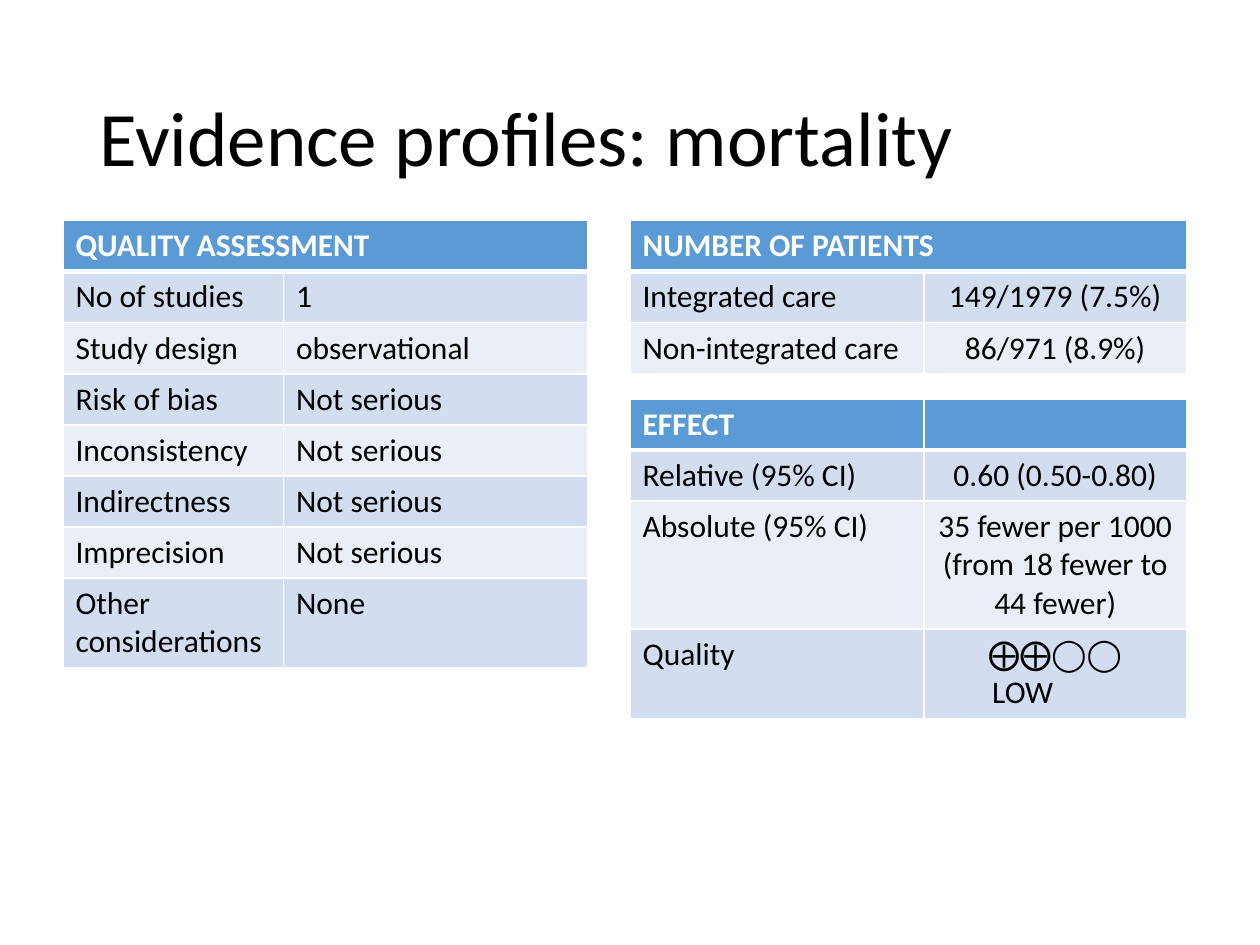
"""Build the mortality evidence profile slide with its three tables."""
from dataclasses import dataclass

from lxml import etree
from pptx import Presentation
from pptx.dml.color import RGBColor
from pptx.enum.text import MSO_ANCHOR, MSO_AUTO_SIZE, PP_ALIGN
from pptx.oxml.ns import qn
from pptx.util import Pt

LEFT, CENTER = PP_ALIGN.LEFT, PP_ALIGN.CENTER
MIDDLE = MSO_ANCHOR.MIDDLE
NO_AUTOFIT = MSO_AUTO_SIZE.NONE
TITLE_ONLY = 5
FONT = "Calibri"
COLORS = {"header": "5B9BD5", "odd": "D2DEEF", "even": "EAEFF7",
          "line": "FFFFFF", "light": "FFFFFF", "dark": "000000"}


@dataclass
class Profile:
    left: float
    top: float
    widths: tuple[float, float]
    row_height: float
    heading: str
    rows: list[tuple[str, str]]
    value_align: PP_ALIGN = CENTER
    merge_heading: bool = True


PROFILES = [
    Profile(36, 126, (126, 174), 29.2, "QUALITY ASSESSMENT", [
        ("No of studies", "1"),
        ("Study design", "observational"),
        ("Risk of bias", "Not serious"),
        ("Inconsistency", "Not serious"),
        ("Indirectness", "Not serious"),
        ("Imprecision", "Not serious"),
        ("Other considerations", "None"),
    ], value_align=LEFT),
    Profile(360, 126, (168, 150), 26, "NUMBER OF PATIENTS", [
        ("Integrated care", "149/1979 (7.5%)"),
        ("Non-integrated care", "86/971 (8.9%)"),
    ]),
    Profile(360, 228, (168, 150), 26, "EFFECT", [
        ("Relative (95% CI)", "0.60 (0.50-0.80)"),
        ("Absolute (95% CI)", "35 fewer per 1000 (from 18 fewer to 44 fewer)"),
        ("Quality", "⨁⨁◯◯\nLOW \t"),
    ], merge_heading=False),
]


def set_font(font, size: float, color: str, bold: bool = False) -> None:
    """Apply the slide's typeface with a size, colour and weight."""
    for name, value in {"name": FONT, "size": Pt(size), "bold": bold}.items():
        setattr(font, name, value)
    font.color.rgb = RGBColor.from_string(COLORS[color])


def set_borders(cell, widths: dict[str, float]) -> None:
    """Draw the given cell sides as solid lines."""
    tc_pr = cell._tc.get_or_add_tcPr()
    for side, width in widths.items():
        ln = etree.SubElement(tc_pr, qn(f"a:ln{side}"), w=str(Pt(width)))
        fill = etree.SubElement(ln, qn("a:solidFill"))
        etree.SubElement(fill, qn("a:srgbClr"), val=COLORS["line"])


def style_cell(cell, text: str, row: int, align: PP_ALIGN) -> None:
    """Fill one cell with text and the look of its row."""
    header = row == 0
    set_borders(cell, {"L": 1, "R": 1, "T": 1, "B": 3} if header
                else {"L": 1, "R": 1, "B": 1})
    band = "header" if header else "odd" if row % 2 else "even"
    cell.fill.solid()
    cell.fill.fore_color.rgb = RGBColor.from_string(COLORS[band])
    cell.text = text
    for p in cell.text_frame.paragraphs:
        p.alignment = align
        set_font(p.font, 18, "light" if header else "dark", header)
        for r in p.runs:
            set_font(r.font, 18, "light" if header else "dark", header)


def add_profile(s, profile: Profile) -> None:
    """Add one two-column evidence table."""
    rows = [(profile.heading, ""), *profile.rows]
    table = s.shapes.add_table(
        len(rows), 2, Pt(profile.left), Pt(profile.top),
        Pt(sum(profile.widths)), Pt(profile.row_height * len(rows))).table
    for column, width in zip(table.columns, profile.widths):
        column.width = Pt(width)
    for i, texts in enumerate(rows):
        table.rows[i].height = Pt(profile.row_height)
        for j, text in enumerate(texts):
            style_cell(table.cell(i, j), text, i,
                       profile.value_align if i and j else LEFT)
    if profile.merge_heading:
        table.cell(0, 0).merge(table.cell(0, 1))


def add_title(s, text: str) -> None:
    """Place and format the slide title."""
    title = s.shapes.title
    box = {"left": 49.5, "top": 28.75, "width": 621, "height": 104.4}
    for name, value in box.items():
        setattr(title, name, Pt(value))
    tf = title.text_frame
    tf.text = text
    for name, value in {"auto_size": NO_AUTOFIT, "word_wrap": True,
                        "vertical_anchor": MIDDLE}.items():
        setattr(tf, name, value)
    p = tf.paragraphs[0]
    p.alignment = LEFT
    p.line_spacing = 0.9
    set_font(p.runs[0].font, 44, "dark")


def main() -> None:
    """Create the presentation and save it."""
    prs = Presentation()
    prs.slide_width, prs.slide_height = Pt(720), Pt(540)
    s = prs.slides.add_slide(prs.slide_layouts[TITLE_ONLY])
    add_title(s, "Evidence profiles: mortality")
    for profile in PROFILES:
        add_profile(s, profile)
    prs.save("out.pptx")


if __name__ == "__main__":
    main()
